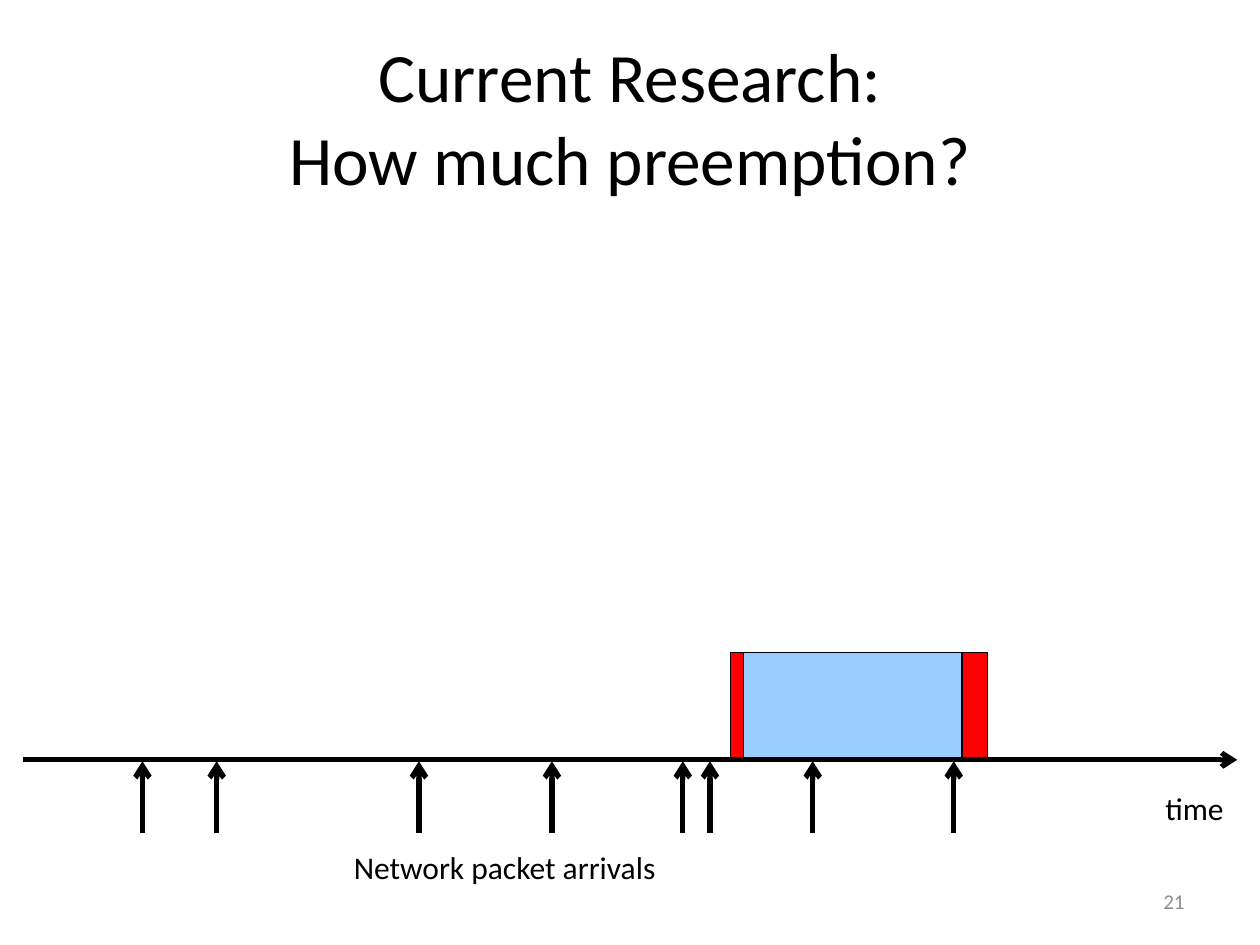
"""Build the slide on preemption with a timeline of packet arrivals."""
from dataclasses import dataclass

from lxml.etree import SubElement
from pptx import Presentation
from pptx.dml.color import RGBColor
from pptx.enum.shapes import MSO_CONNECTOR as Link, MSO_SHAPE as Form
from pptx.enum.text import MSO_ANCHOR as Anchor, MSO_AUTO_SIZE as Fit, PP_ALIGN as Align
from pptx.oxml.ns import qn
from pptx.slide import Slide
from pptx.util import Pt

BLACK = RGBColor(0x00, 0x00, 0x00)
GREY = RGBColor(0x8C, 0x8C, 0x8C)
RED = RGBColor(0xFF, 0x00, 0x00)
BLUE = RGBColor(0x99, 0xCC, 0xFF)

AXIS = 434.2
TICK = 41


@dataclass
class Block:
    left: float
    width: float
    fill: RGBColor


@dataclass
class Label:
    text: str
    box: tuple[float, float, float, float]
    size: float = 18
    color: RGBColor = BLACK
    align: Align = Align.LEFT
    anchor: Anchor = Anchor.TOP
    wrap: bool = True


ARRIVALS = (81.4, 123.8, 239.4, 315.4, 390.2, 405.7, 464.4, 545)
BLOCKS = (
    Block(550.1, 14.1, RED),
    Block(424.8, 124.8, BLUE),
    Block(417.6, 7.2, RED),
)
TITLE = Label("Current Research:\vHow much preemption?", (36, 21.6, 648, 90),
              39.6, align=Align.CENTER, anchor=Anchor.MIDDLE)
LABELS = (
    Label("Network packet arrivals", (195.1, 481, 250.6, 29)),
    Label("time", (658.8, 447.1, 48.2, 29), wrap=False),
    Label("21", (516, 500.5, 168, 28.8), 12, GREY, Align.RIGHT, Anchor.MIDDLE),
)


def assign(item: object, form: dict) -> None:
    for name, value in form.items():
        setattr(item, name, value)


def write(shape: object, label: Label) -> None:
    spots = map(Pt, label.box)
    assign(shape, dict(zip(("left", "top", "width", "height"), spots)))
    frame = shape.text_frame
    frame.text = label.text
    assign(frame, {"word_wrap": label.wrap, "auto_size": Fit.NONE,
                   "vertical_anchor": label.anchor})
    para = frame.paragraphs[0]
    para.alignment = label.align
    for run in para.runs:
        assign(run.font, {"name": "Calibri", "size": Pt(label.size)})
        run.font.color.rgb = label.color


def draw_label(slide: Slide, label: Label) -> None:
    write(slide.shapes.add_textbox(*map(Pt, label.box)), label)


def draw_arrow(slide: Slide, start: tuple[float, float],
               end: tuple[float, float], width: float = 3) -> None:
    arrow = slide.shapes.add_connector(Link.STRAIGHT, *map(Pt, start + end))
    arrow.line.color.rgb = BLACK
    arrow.line.width = Pt(width)
    props = arrow.line._get_or_add_ln()
    SubElement(props, qn("a:tailEnd"), type="arrow")
    SubElement(props.getparent(), qn("a:effectLst"))


def draw_block(slide: Slide, block: Block) -> None:
    spots = map(Pt, (block.left, 373, block.width, 59.8))
    shape = slide.shapes.add_shape(Form.RECTANGLE, *spots)
    shape.shadow.inherit = False
    shape.fill.solid()
    shape.fill.fore_color.rgb = block.fill
    shape.line.color.rgb = BLACK
    shape.line.width = Pt(0.75)


def main() -> None:
    deck = Presentation()
    assign(deck, {"slide_width": Pt(720), "slide_height": Pt(540)})
    slide = deck.slides.add_slide(deck.slide_layouts.get_by_name("Title Only"))
    write(slide.shapes.title, TITLE)
    for left in ARRIVALS:
        draw_arrow(slide, (left, AXIS + 0.8 + TICK), (left, AXIS + 0.8))
    draw_arrow(slide, (13, AXIS), (707, AXIS), 2.89)
    for block in BLOCKS:
        draw_block(slide, block)
    for label in LABELS:
        draw_label(slide, label)
    deck.save("out.pptx")


if __name__ == "__main__":
    main()
